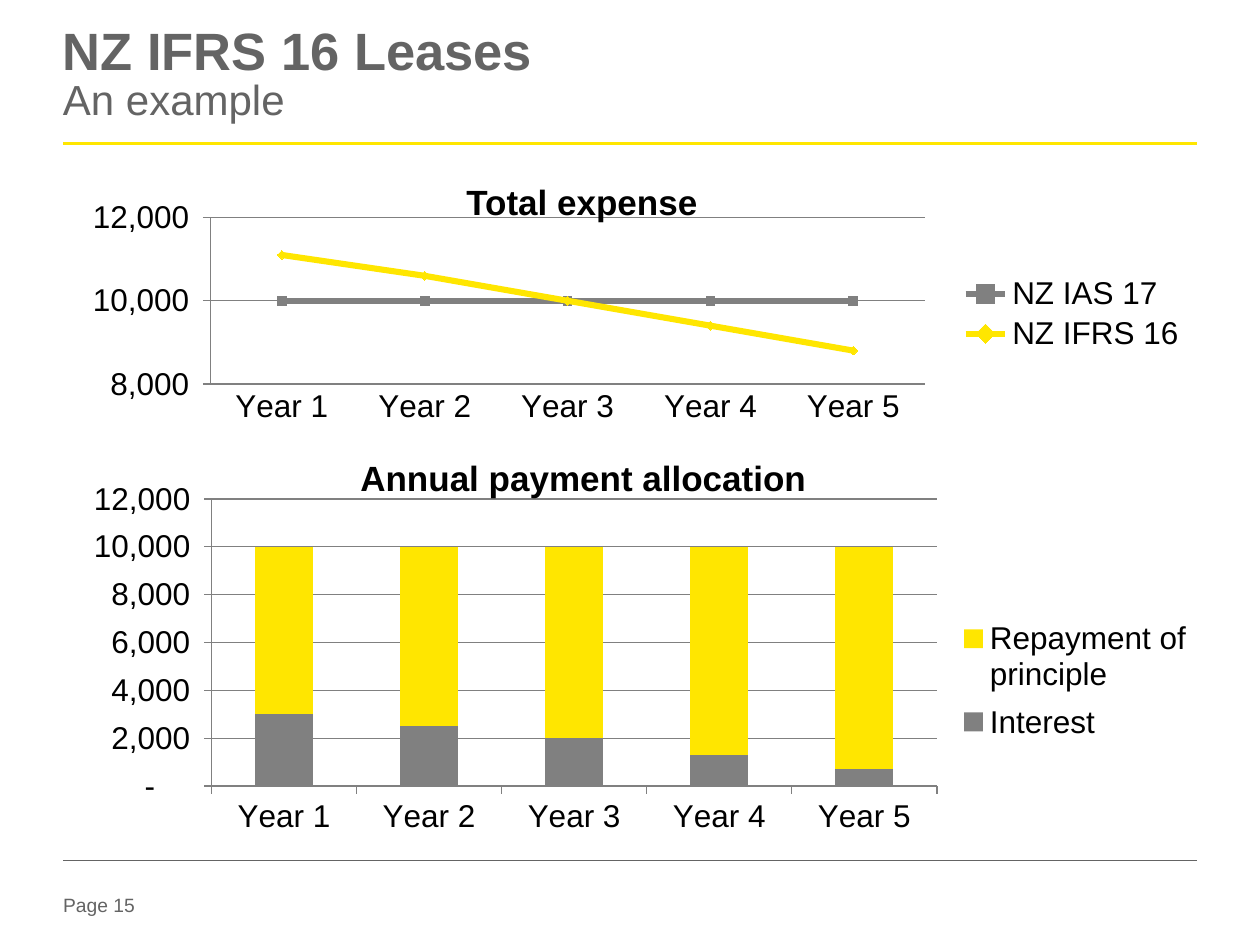
from dataclasses import dataclass

from lxml import etree
from pptx import Presentation
from pptx.chart.data import CategoryChartData
from pptx.dml.color import RGBColor
from pptx.enum import chart as charts, shapes, text
from pptx.oxml.ns import qn
from pptx.util import Pt


@dataclass(frozen=True)
class Theme:
    font: str = "Arial"
    title_size: float = 30
    subtitle_size: float = 24
    caption_size: float = 20
    chart_size: float = 18
    footer_size: float = 11
    heading: RGBColor = RGBColor(0x64, 0x64, 0x64)
    body: RGBColor = RGBColor(0, 0, 0)
    yellow: RGBColor = RGBColor(0xFF, 0xE6, 0)
    grey: RGBColor = RGBColor(0x80, 0x80, 0x80)


@dataclass(frozen=True)
class Box:
    """A rectangle, in points or as fractions of a chart."""
    left: float
    top: float
    width: float
    height: float


@dataclass(frozen=True)
class Series:
    name: str
    values: tuple[int, ...]
    color: RGBColor
    marker: charts.XL_MARKER_STYLE = charts.XL_MARKER_STYLE.SQUARE


@dataclass(frozen=True)
class ChartPanel:
    kind: charts.XL_CHART_TYPE
    box: Box
    plot: Box
    legend: Box
    caption: str
    caption_box: Box
    series: tuple[Series, ...]
    minimum: float
    major_unit: float
    category_tick: charts.XL_TICK_MARK


THEME = Theme()
MARGIN, CONTENT_WIDTH = 36, 648
YEARS = [f"Year {year}" for year in range(1, 6)]
MAXIMUM = 12000
NUMBER_FORMAT = '_-* #,##0_-;\\-* #,##0_-;_-* "-"??_-;_-@_-'

PANELS = (
    ChartPanel(
        charts.XL_CHART_TYPE.LINE_MARKERS,
        Box(MARGIN, 112.3, CONTENT_WIDTH, 134), Box(0.13, 0.09, 0.63, 0.71),
        Box(0.79, 0.32, 0.2, 0.36),
        "Total expense", Box(188.6, 103.7, 288, 23.8),
        (Series("NZ IAS 17", (10000,) * 5, THEME.grey),
         Series("NZ IFRS 16", (11100, 10600, 10000, 9400, 8800), THEME.yellow,
                charts.XL_MARKER_STYLE.DIAMOND)),
        8000, 2000, charts.XL_TICK_MARK.NONE),
    ChartPanel(
        charts.XL_CHART_TYPE.COLUMN_STACKED,
        Box(35.3, 270, 658, 216), Box(0.13, 0.07, 0.63, 0.76),
        Box(0.78, 0.36, 0.2, 0.38),
        "Annual payment allocation", Box(189.4, 261.4, 288, 23.8),
        (Series("Interest", (3000, 2500, 2000, 1300, 700), THEME.grey),
         Series("Repayment of principle", (7000, 7500, 8000, 8700, 9300), THEME.yellow)),
        0, 2000, charts.XL_TICK_MARK.OUTSIDE),
)


def points(box: Box) -> tuple[Pt, ...]:
    return Pt(box.left), Pt(box.top), Pt(box.width), Pt(box.height)


def add_text_box(slide, box: Box, inset_top: float = 0):
    """Add a wrapping text box and return its first paragraph."""
    frame = slide.shapes.add_textbox(*points(box)).text_frame
    frame.word_wrap = True
    frame.margin_left = frame.margin_right = frame.margin_bottom = 0
    frame.margin_top = Pt(inset_top)
    return frame.paragraphs[0]


def style_font(font, size: float, color: RGBColor) -> None:
    font.name = THEME.font
    font.size = Pt(size)
    font.color.rgb = color


def add_title(slide, title: str, subtitle: str) -> None:
    paragraph = add_text_box(slide, Box(MARGIN, 15.8, CONTENT_WIDTH, 67.7))
    paragraph.line_spacing = 0.85
    for content, size, bold in ((title, THEME.title_size, True),
                                (subtitle, THEME.subtitle_size, False)):
        if paragraph.runs:
            paragraph.add_line_break()
        run = paragraph.add_run()
        run.text = content
        style_font(run.font, size, THEME.heading)
        run.font.bold = bold


def add_rule(slide, top: float, color: RGBColor, width: float) -> None:
    line = slide.shapes.add_connector(
        shapes.MSO_CONNECTOR.STRAIGHT,
        Pt(MARGIN), Pt(top), Pt(MARGIN + CONTENT_WIDTH), Pt(top))
    line.line.color.rgb = color
    line.line.width = Pt(width)
    etree.SubElement(line._element.spPr, qn("a:effectLst"))


def place_manually(element, position: int, box: Box, inner: bool = False) -> None:
    """Give a plot area or legend a fixed place inside its chart."""
    for old in element.findall(qn("c:layout")):
        element.remove(old)
    layout = etree.Element(qn("c:layout"))
    manual = etree.SubElement(layout, qn("c:manualLayout"))
    settings = [("layoutTarget", "inner")] if inner else []
    settings += [("xMode", "edge"), ("yMode", "edge"), ("x", box.left),
                 ("y", box.top), ("w", box.width), ("h", box.height)]
    for name, value in settings:
        etree.SubElement(manual, qn(f"c:{name}")).set("val", str(value))
    element.insert(position, layout)


def style_axes(chart, panel: ChartPanel) -> None:
    value_axis, category_axis = chart.value_axis, chart.category_axis
    value_axis.minimum_scale = panel.minimum
    value_axis.maximum_scale = MAXIMUM
    value_axis.major_unit = panel.major_unit
    value_axis.has_major_gridlines = True
    value_axis.major_tick_mark = charts.XL_TICK_MARK.OUTSIDE
    value_axis.tick_labels.number_format = NUMBER_FORMAT
    value_axis.tick_labels.number_format_is_linked = False
    category_axis.major_tick_mark = panel.category_tick
    for part in (value_axis, category_axis, value_axis.major_gridlines):
        part.format.line.color.rgb = THEME.grey
        part.format.line.width = Pt(0.75)


def style_series(plot, panel: ChartPanel) -> None:
    plot.vary_by_categories = False
    is_line = panel.kind == charts.XL_CHART_TYPE.LINE_MARKERS
    if not is_line:
        plot.gap_width = 150
        plot.overlap = 100
    for drawn, series in zip(plot.series, panel.series):
        if not is_line:
            drawn.format.fill.solid()
            drawn.format.fill.fore_color.rgb = series.color
            continue
        drawn.smooth = False
        drawn.format.line.color.rgb = series.color
        drawn.format.line.width = Pt(3.5)
        drawn.marker.style = series.marker
        drawn.marker.size = 5
        drawn.marker.format.fill.solid()
        drawn.marker.format.fill.fore_color.rgb = series.color
        drawn.marker.format.line.color.rgb = series.color


def add_chart_panel(slide, panel: ChartPanel) -> None:
    data = CategoryChartData(number_format=NUMBER_FORMAT)
    data.categories = YEARS
    for series in panel.series:
        data.add_series(series.name, series.values)
    chart = slide.shapes.add_chart(panel.kind, *points(panel.box), data).chart
    chart.has_title = False
    style_font(chart.font, THEME.chart_size, THEME.body)
    style_axes(chart, panel)
    style_series(chart.plots[0], panel)
    chart.has_legend = True
    chart.legend.position = charts.XL_LEGEND_POSITION.RIGHT
    chart.legend.include_in_layout = False
    place_manually(chart._chartSpace.chart.plotArea, 0, panel.plot, inner=True)
    place_manually(chart.legend._element, 1, panel.legend)

    caption = add_text_box(slide, panel.caption_box, inset_top=2.9)
    caption.text = panel.caption
    caption.alignment = text.PP_ALIGN.CENTER
    caption.line_spacing = 0.85
    caption.space_after = Pt(6)
    style_font(caption.font, THEME.caption_size, THEME.body)
    caption.font.bold = True


def main() -> None:
    presentation = Presentation()
    presentation.slide_width, presentation.slide_height = Pt(720), Pt(540)
    slide = presentation.slides.add_slide(presentation.slide_layouts[6])
    footer = add_text_box(slide, Box(MARGIN, 510.5, 57, 16))
    footer.text = "Page 15"
    style_font(footer.font, THEME.footer_size, THEME.heading)
    add_rule(slide, 82, THEME.yellow, 1.5)
    add_rule(slide, 491.5, THEME.heading, 0.25)
    add_title(slide, "NZ IFRS 16 Leases", "An example")
    for panel in PANELS:
        add_chart_panel(slide, panel)
    presentation.save("out.pptx")


if __name__ == "__main__":
    main()
